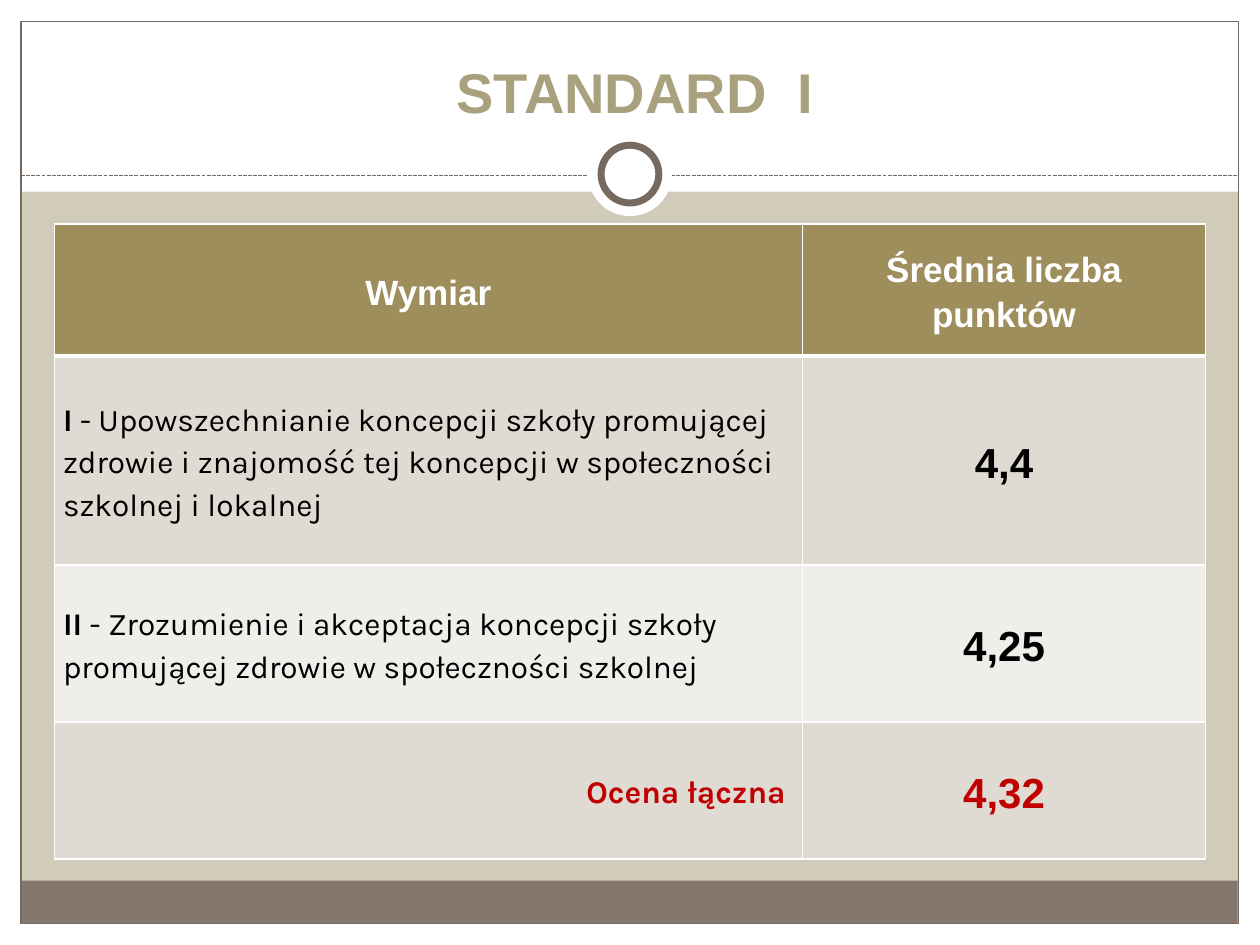
"""Build the slide with the average scores for Standard I."""
from lxml.etree import SubElement
from pptx import Presentation
from pptx.dml.color import RGBColor
from pptx.enum.dml import MSO_LINE
from pptx.enum.shapes import MSO_CONNECTOR, MSO_SHAPE
from pptx.enum.text import MSO_ANCHOR, PP_ALIGN
from pptx.oxml.ns import qn
from pptx.util import Pt

COLORS = {
    "background": "D0CCB9", "white": "FFFFFF", "footer": "85776D",
    "frame": "756960", "title": "A9A17E", "header": "9E8E5C",
    "band": "DFDBD2", "light": "F0EEEA", "black": "000000", "red": "C00000",
}


def color(name):
    return RGBColor.from_string(COLORS[name])


def add_run(paragraph, text, font_color, **formats):
    run = paragraph.add_run()
    run.text = text
    run.font.color.rgb = color(font_color)
    for name, value in formats.items():
        setattr(run.font, name, value)


presentation = Presentation()
presentation.slide_width, presentation.slide_height = Pt(720), Pt(540)
slide = presentation.slides.add_slide(presentation.slide_layouts[5])
slide.background.fill.solid()
slide.background.fill.fore_color.rgb = color("background")

decorations = [
    (MSO_SHAPE.RECTANGLE, (0, 528, 720, 12), "white", 0),
    (MSO_SHAPE.RECTANGLE, (0, 0, 720, 109.5), "white", 0),
    (MSO_SHAPE.RECTANGLE, (0, 0, 12, 540), "white", 0),
    (MSO_SHAPE.RECTANGLE, (708, 0, 12, 540), "white", 0),
    (MSO_SHAPE.RECTANGLE, (11.75, 503.25, 695.5, 24.5), "footer", 0),
    (MSO_SHAPE.RECTANGLE, (12, 12.25, 695.75, 515.5), None, 0.75),
    (MSO_SHAPE.OVAL, (336, 75.5, 48, 48), "white", 0),
    (MSO_SHAPE.OVAL, (343.5, 83, 33, 33), "white", 4),
]
for kind, place, fill, line_width in decorations:
    if kind == MSO_SHAPE.OVAL and not line_width:
        divider = slide.shapes.add_connector(
            MSO_CONNECTOR.STRAIGHT, Pt(12), Pt(100.5), Pt(707.75), Pt(100.5))
        divider.line.color.rgb = color("frame")
        divider.line.width = Pt(0.75)
        divider.line.dash_style = MSO_LINE.SQUARE_DOT
        SubElement(divider.element.spPr, qn("a:effectLst"))
    shape = slide.shapes.add_shape(kind, *map(Pt, place))
    shape.shadow.inherit = False
    if fill:
        shape.fill.solid()
        shape.fill.fore_color.rgb = color(fill)
    else:
        shape.fill.background()
    if line_width:
        shape.line.color.rgb = color("frame")
        shape.line.width = Pt(line_width)
    else:
        shape.line.fill.background()

title = slide.shapes.title
title.element.getparent().append(title.element)
title.left, title.top, title.width, title.height = map(Pt, (20, 15, 686, 85))
title.text_frame.vertical_anchor = MSO_ANCHOR.BOTTOM
title.text_frame.margin_bottom = Pt(29)
title_paragraph = title.text_frame.paragraphs[0]
title_paragraph.alignment = PP_ALIGN.CENTER
add_run(title_paragraph, "STANDARD  I", "title", name="Arial", size=Pt(32), bold=True)

header_font = {"name": "Arial", "size": Pt(20)}
label_font = {"name": "Karla", "size": Pt(18)}
score_font = {"name": "Arial", "size": Pt(24)}
rows = [
    (75.5, "header", "white", PP_ALIGN.CENTER, header_font, header_font,
     ["Wymiar"], "Średnia liczba punktów"),
    (119.5, "band", "black", PP_ALIGN.LEFT, label_font, score_font,
     ["I", " - Upowszechnianie koncepcji szkoły promującej zdrowie i znajomość "
      "tej koncepcji w społeczności szkolnej i lokalnej"], "4,4"),
    (89.5, "light", "black", PP_ALIGN.LEFT, label_font, score_font,
     ["II", " - Zrozumienie i akceptacja koncepcji szkoły promującej zdrowie "
      "w społeczności szkolnej"], "4,25"),
    (78.5, "band", "red", PP_ALIGN.RIGHT, label_font, score_font,
     ["Ocena łączna "], "4,32"),
]
table = slide.shapes.add_table(
    len(rows), 2, Pt(31), Pt(128), Pt(658), Pt(363)).table
table.columns[0].width, table.columns[1].width = Pt(427.5), Pt(230.5)
cell_format = {
    "vertical_anchor": MSO_ANCHOR.MIDDLE, "margin_left": Pt(5),
    "margin_right": Pt(5), "margin_top": 0, "margin_bottom": 0,
}

for row_index, row in enumerate(rows):
    height, fill, font_color, alignment, first_font, second_font, label, score = row
    table.rows[row_index].height = Pt(height)
    contents = [(label, first_font, alignment), ([score], second_font, PP_ALIGN.CENTER)]
    for column, (texts, font, cell_alignment) in enumerate(contents):
        cell = table.cell(row_index, column)
        for name, value in cell_format.items():
            setattr(cell, name, value)
        paragraph = cell.text_frame.paragraphs[0]
        paragraph.alignment = cell_alignment
        paragraph.line_spacing = 1.15
        for position, text in enumerate(texts):
            add_run(paragraph, text, font_color, bold=position == 0, **font)
        properties = cell._tc.get_or_add_tcPr()
        for side in ("lnL", "lnR", "lnT", "lnB"):
            thick = (row_index, side) in ((0, "lnB"), (1, "lnT"))
            border = SubElement(properties, qn(f"a:{side}"), w=str(Pt(3 if thick else 1)))
            border_fill = SubElement(border, qn("a:solidFill"))
            SubElement(border_fill, qn("a:srgbClr"), val=COLORS["white"])
        cell.fill.solid()
        cell.fill.fore_color.rgb = color(fill)

presentation.save("out.pptx")
